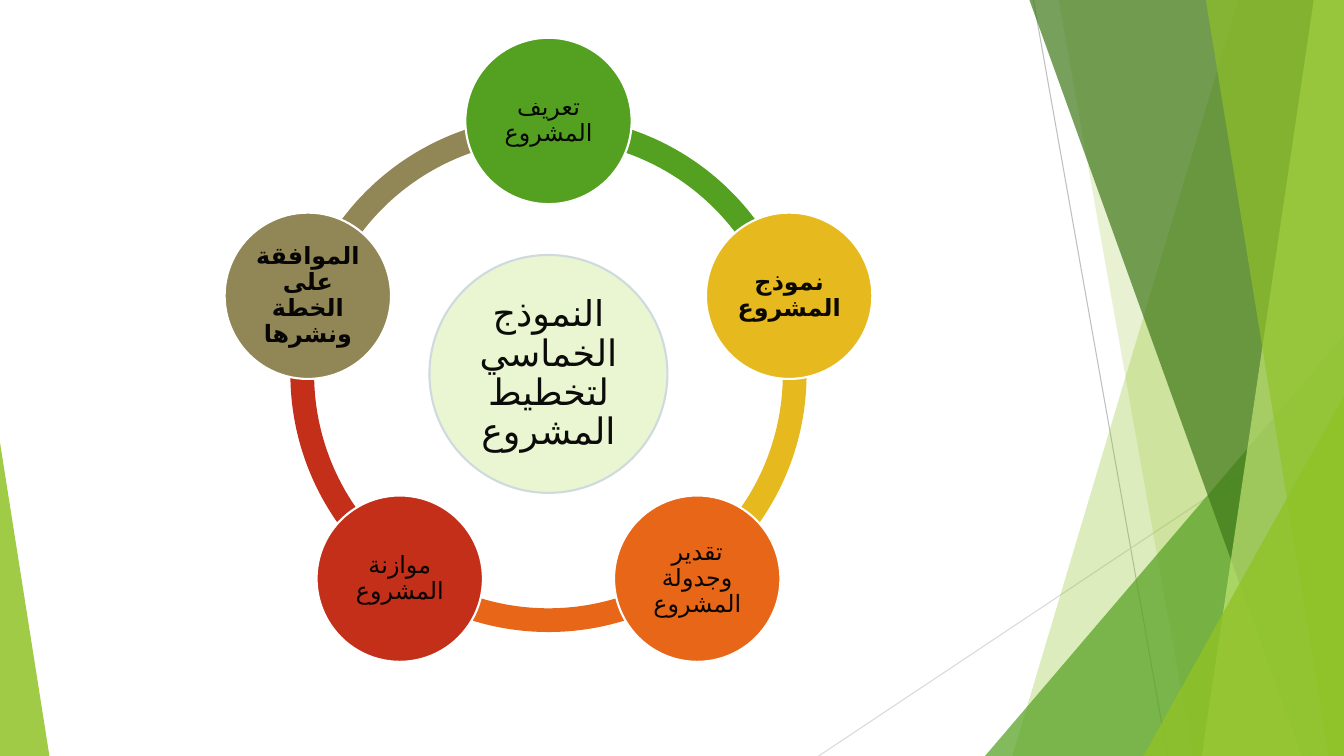
from dataclasses import dataclass
from math import cos, radians, sin

from lxml import etree
from pptx import Presentation
from pptx.dml.color import RGBColor
from pptx.enum.shapes import MSO_CONNECTOR, MSO_SHAPE
from pptx.enum.text import MSO_ANCHOR, PP_ALIGN
from pptx.oxml.ns import qn
from pptx.util import Inches, Pt

ELLIPSE = MSO_SHAPE.OVAL
BLOCK_ARC = MSO_SHAPE.BLOCK_ARC
TRIANGLE = MSO_SHAPE.ISOSCELES_TRIANGLE
STRAIGHT = MSO_CONNECTOR.STRAIGHT
CENTER = PP_ALIGN.CENTER
MIDDLE = MSO_ANCHOR.MIDDLE

SLIDE_W, SLIDE_H = 13.33, 7.5
FONT = "Lato"
ARABIC_FONT = "+mn-cs"
HUB_X, HUB_Y = 5.44, 3.71
HUB_SIZE, STAGE_SIZE, RING_SIZE = 2.36, 1.65, 5.12
ORBIT = 2.51
RING_THICKNESS = 0.046


@dataclass
class Facet:
    """Polygon from a slanted left edge to the right side of the slide."""
    top_x: float
    bottom_x: float
    color: str
    opacity: int


@dataclass
class Wedge:
    """Triangle standing on the bottom edge, with its peak at 0 or 1."""
    left: float
    top: float
    width: float
    peak: int
    color: str
    opacity: int


@dataclass
class Stage:
    text: str
    color: str
    bold: bool = False


BACKDROP = [
    Facet(12.28, 10.04, "90C226", 30),
    Facet(10.5, 11.83, "90C226", 20),
    Wedge(9.77, 3.33, 3.56, 1, "54A021", 72),
    Facet(10.21, 12.91, "3F7819", 70),
    Facet(13.03, 11.92, "C0E474", 70),
    Facet(11.96, 13.18, "90C226", 65),
    Wedge(11.34, 3.93, 1.99, 1, "90C226", 80),
    Wedge(0, 4.39, 0.49, 0, "90C226", 85),
]

STAGES = [
    Stage("تعريف المشروع", "54A021"),
    Stage("نموذج المشروع", "E6B91E", bold=True),
    Stage("تقدير وجدولة المشروع", "E76618"),
    Stage("موازنة المشروع", "C42F1A"),
    Stage("الموافقة على الخطة ونشرها", "918655", bold=True),
]


def rgb(color: str) -> RGBColor:
    return RGBColor.from_string(color)


def set_opacity(element, percent: int) -> None:
    for color in element.iter(qn("a:srgbClr")):
        etree.SubElement(color, qn("a:alpha")).set("val", str(percent * 1000))


def paint(shape, color: str, opacity: int = 100, outline: str = "") -> None:
    shape.shadow.inherit = False
    shape.fill.solid()
    shape.fill.fore_color.rgb = rgb(color)
    if opacity < 100:
        set_opacity(shape.element, opacity)
    if outline:
        shape.line.color.rgb = rgb(outline)
        shape.line.width = Pt(1.5)
    else:
        shape.line.fill.background()


def write(shape, text: str, *, size: float, inset: float, bold: bool = False) -> None:
    frame = shape.text_frame
    frame.word_wrap = True
    frame.vertical_anchor = MIDDLE
    frame.margin_left = frame.margin_right = Inches(inset)
    frame.margin_top = frame.margin_bottom = Inches(inset)
    paragraph = frame.paragraphs[0]
    paragraph.alignment = CENTER
    paragraph.line_spacing = 0.9
    properties = paragraph._p.get_or_add_pPr()
    properties.set("rtl", "1")
    space_after = etree.SubElement(properties, qn("a:spcAft"))
    etree.SubElement(space_after, qn("a:spcPct")).set("val", "35000")
    run = paragraph.add_run()
    run.text = text
    run.font.size = Pt(size)
    run.font.bold = bold
    run.font.color.rgb = rgb("000000")
    run.font.name = FONT
    set_opacity(run._r, 95)
    # Arabic text takes the complex-script typeface of the theme
    run_properties = run._r.get_or_add_rPr()
    run_properties.set("lang", "ar-SA")
    etree.SubElement(run_properties, qn("a:cs")).set("typeface", ARABIC_FONT)


def add_ray(slide, x1: float, y1: float, x2: float, y2: float, color: str) -> None:
    ray = slide.shapes.add_connector(
        STRAIGHT, Inches(x1), Inches(y1), Inches(x2), Inches(y2))
    ray.line.color.rgb = rgb(color)
    ray.line.width = Pt(0.75)
    etree.SubElement(ray.element.spPr, qn("a:effectLst"))


def add_facet(slide, facet: Facet) -> None:
    corners = [(SLIDE_W, 0), (SLIDE_W, SLIDE_H), (facet.bottom_x, SLIDE_H)]
    builder = slide.shapes.build_freeform(Inches(facet.top_x), 0)
    builder.add_line_segments([(Inches(x), Inches(y)) for x, y in corners])
    paint(builder.convert_to_shape(), facet.color, facet.opacity)


def add_wedge(slide, wedge: Wedge) -> None:
    triangle = slide.shapes.add_shape(
        TRIANGLE, Inches(wedge.left), Inches(wedge.top),
        Inches(wedge.width), Inches(SLIDE_H - wedge.top))
    triangle.adjustments[0] = wedge.peak
    paint(triangle, wedge.color, wedge.opacity)


def add_round(slide, kind, x: float, y: float, size: float):
    """Add a shape of equal width and height centred on x, y."""
    return slide.shapes.add_shape(
        kind, Inches(x - size / 2), Inches(y - size / 2), Inches(size), Inches(size))


def add_arc(slide, start: float, end: float, color: str) -> None:
    arc = add_round(slide, BLOCK_ARC, HUB_X, HUB_Y, RING_SIZE)
    # Angles are stored in 60000ths of a degree, adjustments in 100000ths
    arc.adjustments[0] = start % 360 * 0.6
    arc.adjustments[1] = end % 360 * 0.6
    arc.adjustments[2] = RING_THICKNESS
    paint(arc, color)


def main() -> None:
    prs = Presentation()
    prs.slide_width, prs.slide_height = Inches(SLIDE_W), Inches(SLIDE_H)
    slide = prs.slides.add_slide(prs.slide_layouts[6])

    # Backdrop of rays and translucent facets
    add_ray(slide, 10.25, 0, 11.58, SLIDE_H, "BFBFBF")
    add_ray(slide, SLIDE_W, 4.03, 8.12, SLIDE_H, "D9D9D9")
    for piece in BACKDROP:
        if isinstance(piece, Facet):
            add_facet(slide, piece)
        else:
            add_wedge(slide, piece)

    # Ring: each arc runs clockwise from its stage to the next
    step = 360 / len(STAGES)
    placed = [(270 + i * step, stage) for i, stage in enumerate(STAGES)]
    for angle, stage in reversed(placed):
        add_arc(slide, angle, angle + step, stage.color)

    # Hub
    hub = add_round(slide, ELLIPSE, HUB_X, HUB_Y, HUB_SIZE)
    paint(hub, "EAF6D1", outline="CFDADF")
    write(hub, "النموذج الخماسي لتخطيط المشروع", size=26, inset=0.04)

    # Stages
    for angle, stage in placed:
        x = HUB_X + ORBIT * cos(radians(angle))
        y = HUB_Y + ORBIT * sin(radians(angle))
        disc = add_round(slide, ELLIPSE, x, y, STAGE_SIZE)
        paint(disc, stage.color, outline="FFFFFF")
        write(disc, stage.text, size=17, inset=0.02, bold=stage.bold)

    prs.save("out.pptx")


if __name__ == "__main__":
    main()
